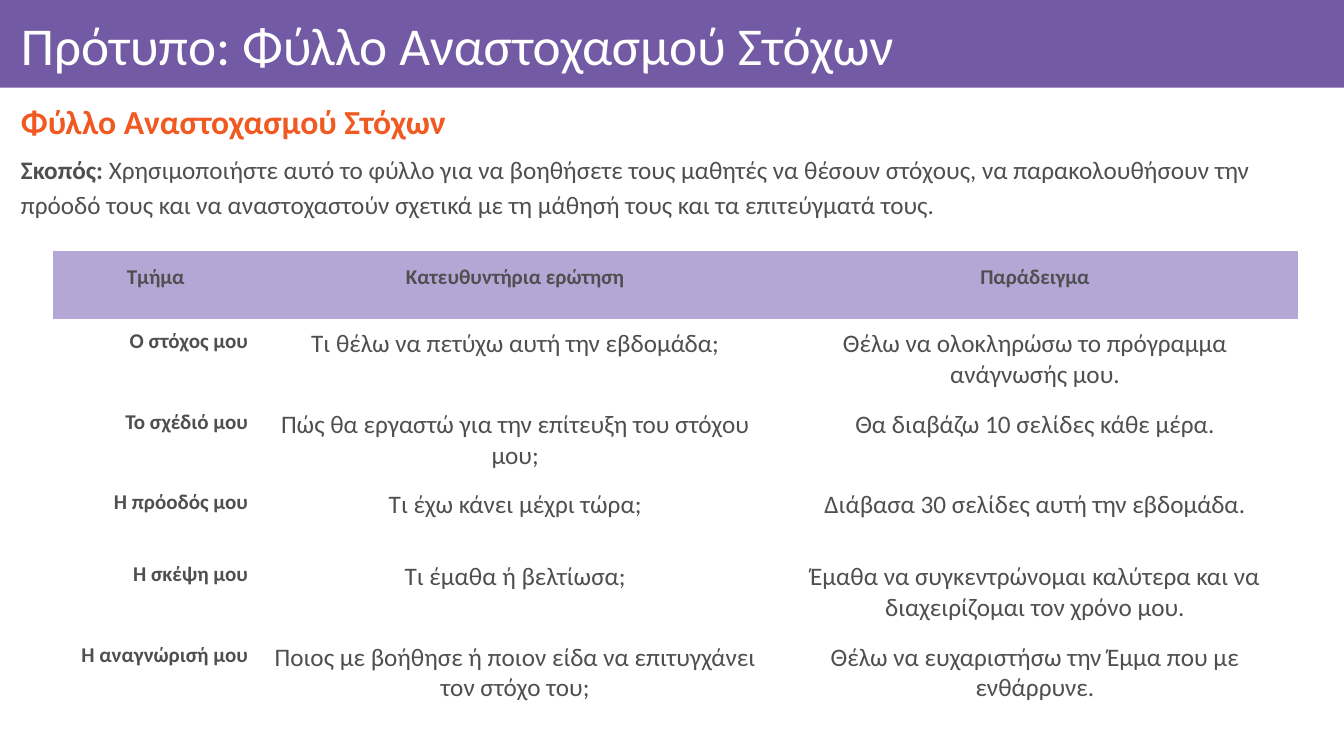
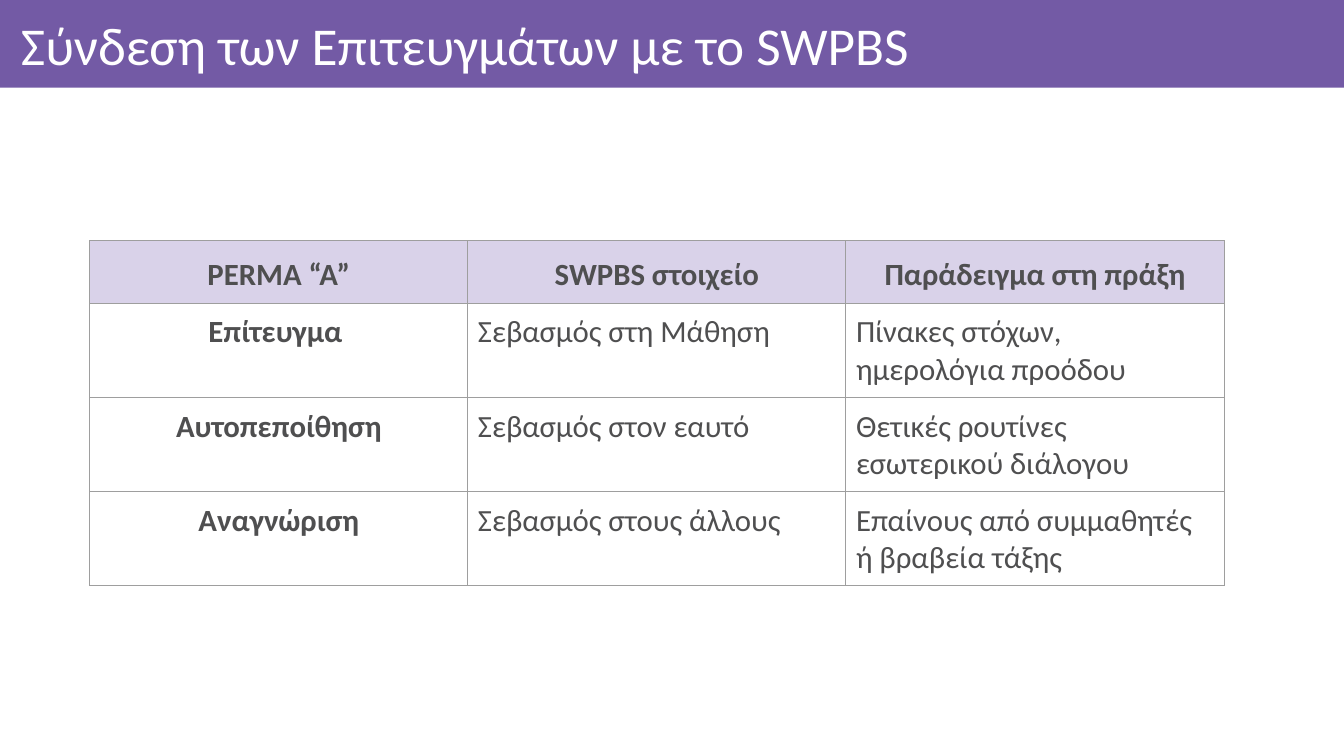
"""Build two slides on goal reflection and achievements, sharing one band and title style."""
from dataclasses import dataclass
from typing import Any, Optional

from lxml.etree import SubElement
from pptx import Presentation
from pptx.dml.color import RGBColor as Rgb
from pptx.enum.shapes import MSO_SHAPE as Shape
from pptx.enum.text import MSO_ANCHOR as Anchor, PP_ALIGN as Align
from pptx.oxml.ns import qn
from pptx.util import Emu, Pt

EMU_PER_PX = 9144
PLAIN_TABLE_STYLE = "{2D5ABB26-0587-4C30-8999-92F81FD0307C}"


@dataclass(frozen=True)
class Theme:
    """Colours and type sizes of the deck."""
    font: str = "Calibri"
    band: str = "735AA5"
    on_band: str = "FFFFFF"
    accent: str = "F05A22"
    ink: str = "4F4F50"
    header_strong: str = "B4A7D6"
    header_soft: str = "D9D2E9"
    grid: str = "9E9E9E"
    title_size: int = 38
    heading_size: int = 24
    table_size: int = 22
    body_size: int = 18
    label_size: int = 15


THEME = Theme()


@dataclass(frozen=True)
class Span:
    """A stretch of text in one style."""
    text: str
    size: int
    color: str = THEME.ink
    bold: bool = False


@dataclass(frozen=True)
class TextBox:
    """A one-paragraph text box, measured in px."""
    top: int
    height: int
    spans: tuple[Span, ...]
    paragraph_format: dict[str, Any]
    anchor: Anchor = Anchor.MIDDLE
    margins: tuple[int, int, int, int] = (10, 5, 10, 5)
    left: int = 11
    width: int = 1306


@dataclass(frozen=True)
class Grid:
    """A table with a header row and a bold label column, measured in px."""
    left: int
    top: int
    columns: tuple[int, ...]
    rows: tuple[int, ...]
    header_fill: str
    label_size: int
    body_size: int
    label_align: Align
    body_align: Align
    texts: tuple[tuple[str, ...], ...]
    border: Optional[str] = None


def px(length: int) -> Emu:
    """Turn px into EMU."""
    return Emu(length * EMU_PER_PX)


def apply(target: Any, values: dict[str, Any]) -> None:
    """Set each named attribute on the target."""
    for name, value in values.items():
        setattr(target, name, value)


def margin_values(left: int, top: int, right: int, bottom: int) -> dict[str, Emu]:
    """Name the four margins, given in px."""
    return {"margin_left": px(left), "margin_top": px(top),
            "margin_right": px(right), "margin_bottom": px(bottom)}


def write(para: Any, spans: tuple[Span, ...], values: dict[str, Any]) -> None:
    """Fill a paragraph with styled spans."""
    apply(para, values)
    for span in spans:
        run = para.add_run()
        run.text = span.text
        apply(run.font, {"name": THEME.font, "size": Pt(span.size), "bold": span.bold})
        run.font.color.rgb = Rgb.from_string(span.color)


def add_text(page: Any, box: TextBox) -> None:
    """Draw a text box."""
    shape = page.shapes.add_textbox(px(box.left), px(box.top), px(box.width), px(box.height))
    frame = shape.text_frame
    apply(frame, {"word_wrap": True, "vertical_anchor": box.anchor, **margin_values(*box.margins)})
    write(frame.paragraphs[0], box.spans, box.paragraph_format)


def add_page(deck: Any, title: str) -> Any:
    """Add a blank page with the title band."""
    page = deck.slides.add_slide(deck.slide_layouts[6])
    band = page.shapes.add_shape(Shape.RECTANGLE, 0, 0, deck.slide_width, px(87))
    band.shadow.inherit = False
    band.fill.solid()
    band.fill.fore_color.rgb = Rgb.from_string(THEME.band)
    band.line.fill.background()
    add_text(page, TextBox(9, 78, (Span(title, THEME.title_size, THEME.on_band),),
                           {"line_spacing": 0.9}, margins=(10, 6, 6, 6)))
    return page


def add_borders(cell: Any, color: str) -> None:
    """Draw a thin line on all four sides of a cell."""
    properties = cell._tc.get_or_add_tcPr()
    for side in ("lnL", "lnR", "lnT", "lnB"):
        line = SubElement(properties, qn(f"a:{side}"), w=str(Pt(0.75)))
        fill = SubElement(line, qn("a:solidFill"))
        SubElement(fill, qn("a:srgbClr"), val=color)


def add_grid(page: Any, grid: Grid) -> None:
    """Draw a table."""
    frame = page.shapes.add_table(len(grid.rows), len(grid.columns), px(grid.left), px(grid.top),
                                  px(sum(grid.columns)), px(sum(grid.rows)))
    table = frame.table
    table.horz_banding = False
    table._tbl.tblPr.find(qn("a:tableStyleId")).text = PLAIN_TABLE_STYLE
    for column, width in zip(table.columns, grid.columns):
        column.width = px(width)
    for row, height in zip(table.rows, grid.rows):
        row.height = px(height)
    for row_index, texts in enumerate(grid.texts):
        for column_index, text in enumerate(texts):
            cell = table.cell(row_index, column_index)
            is_header, is_label = row_index == 0, column_index == 0
            apply(cell, margin_values(10, 10, 10, 10))
            if grid.border:
                add_borders(cell, grid.border)
            if is_header:
                cell.fill.solid()
                cell.fill.fore_color.rgb = Rgb.from_string(grid.header_fill)
                values = {"alignment": Align.CENTER, "line_spacing": 1.15}
            else:
                cell.fill.background()
                values = {"alignment": grid.label_align if is_label else grid.body_align}
            bold = is_header or is_label
            size = grid.label_size if bold else grid.body_size
            write(cell.text_frame.paragraphs[0], (Span(text, size, bold=bold),), values)


HEADING = TextBox(
    93, 60, (Span("Φύλλο Αναστοχασμού Στόχων", THEME.heading_size, THEME.accent, True),),
    {"alignment": Align.JUSTIFY, "line_spacing": 0.9})

PURPOSE = TextBox(
    144, 594,
    (Span("Σκοπός: ", THEME.body_size, bold=True),
     Span("Χρησιμοποιήστε αυτό το φύλλο για να βοηθήσετε τους μαθητές να θέσουν στόχους, "
          "να παρακολουθήσουν την πρόοδό τους και να αναστοχαστούν σχετικά με τη μάθησή τους "
          "και τα επιτεύγματά τους.", THEME.body_size)),
    {"line_spacing": 1.15, "space_before": Pt(12), "space_after": Pt(12)}, Anchor.TOP)

REFLECTION = Grid(
    53, 249, (203, 510, 521), (67, *(71,) * 4, 109), THEME.header_strong,
    THEME.label_size, THEME.body_size, Align.RIGHT, Align.CENTER,
    (("Τμήμα", "Κατευθυντήρια ερώτηση", "Παράδειγμα"),
     ("Ο στόχος μου", "Τι θέλω να πετύχω αυτή την εβδομάδα;",
      "Θέλω να ολοκληρώσω το πρόγραμμα ανάγνωσής μου."),
     ("Το σχέδιό μου", "Πώς θα εργαστώ για την επίτευξη του στόχου μου;",
      "Θα διαβάζω 10 σελίδες κάθε μέρα."),
     ("Η πρόοδός μου", "Τι έχω κάνει μέχρι τώρα;", "Διάβασα 30 σελίδες αυτή την εβδομάδα."),
     ("Η σκέψη μου", "Τι έμαθα ή βελτίωσα;",
      "Έμαθα να συγκεντρώνομαι καλύτερα και να διαχειρίζομαι τον χρόνο μου."),
     ("Η αναγνώρισή μου", "Ποιος με βοήθησε ή ποιον είδα να επιτυγχάνει τον στόχο του;",
      "Θέλω να ευχαριστήσω την Έμμα που με ενθάρρυνε.")))

CONNECTION = Grid(
    89, 239, (375,) * 3, (42,) * 4, THEME.header_soft,
    THEME.table_size, THEME.table_size, Align.CENTER, Align.LEFT,
    (("PERMA “A”", "SWPBS στοιχείο", "Παράδειγμα στη πράξη"),
     ("Επίτευγμα ", "Σεβασμός στη Μάθηση", "Πίνακες στόχων, ημερολόγια προόδου"),
     ("Αυτοπεποίθηση", "Σεβασμός στον εαυτό", "Θετικές ρουτίνες εσωτερικού διάλογου"),
     ("Αναγνώριση", "Σεβασμός στους άλλους", "Επαίνους από συμμαθητές ή βραβεία τάξης")),
    THEME.grid)


def main() -> None:
    """Build and save the deck."""
    deck = Presentation()
    apply(deck, {"slide_width": px(1333), "slide_height": px(750)})
    reflection_page = add_page(deck, "Πρότυπο: Φύλλο Αναστοχασμού Στόχων")
    for box in (HEADING, PURPOSE):
        add_text(reflection_page, box)
    add_grid(reflection_page, REFLECTION)
    connection_page = add_page(deck, "Σύνδεση των Επιτευγμάτων με το SWPBS")
    add_grid(connection_page, CONNECTION)
    deck.save("out.pptx")


if __name__ == "__main__":
    main()
